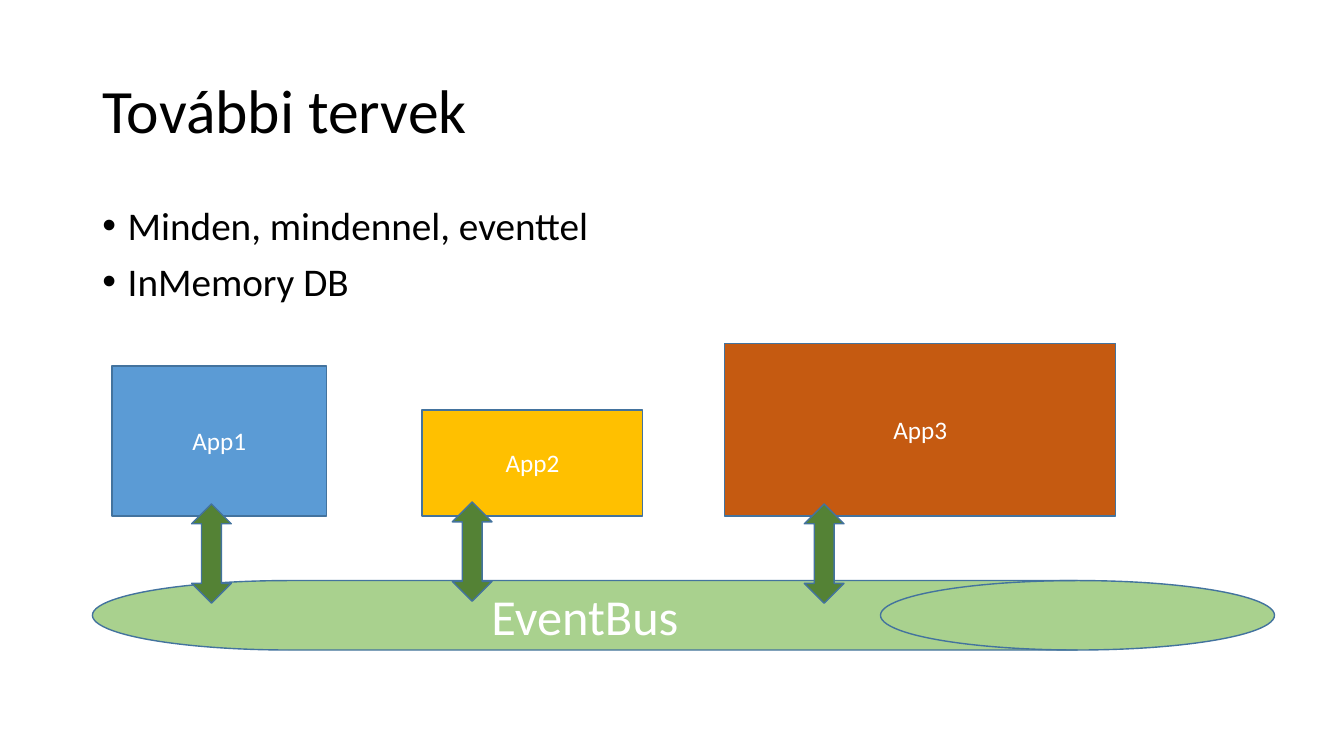
from dataclasses import dataclass

from lxml.etree import SubElement
from pptx import Presentation
from pptx.dml.color import RGBColor
from pptx.enum.shapes import MSO_SHAPE
from pptx.enum.text import MSO_ANCHOR, PP_ALIGN
from pptx.oxml.ns import qn
from pptx.util import Cm, Pt


@dataclass(frozen=True)
class Theme:
    font: str = "Calibri"
    text: str = "000000"
    label: str = "FFFFFF"
    outline: str = "43739E"
    bus: str = "A9D18E"
    arrow: str = "548235"
    blue: str = "5B9BD5"
    yellow: str = "FFC000"
    orange: str = "C55A11"
    title_size: int = 44
    bus_size: int = 36
    body_size: int = 28
    app_size: int = 18


class SlideBuilder:
    def __init__(self, slide, theme):
        self.slide = slide
        self.theme = theme

    def style(self, para, size, color):
        for span in para.runs:
            span.font.name = self.theme.font
            span.font.size = Pt(size)
            span.font.color.rgb = RGBColor.from_string(color)

    def text_box(self, left, top, width, height, anchor):
        box = self.slide.shapes.add_textbox(Cm(left), Cm(top), Cm(width), Cm(height))
        box.text_frame.word_wrap = True
        box.text_frame.vertical_anchor = anchor
        return box.text_frame

    def title(self, text, left, top, width, height):
        frame = self.text_box(left, top, width, height, MSO_ANCHOR.MIDDLE)
        frame.text = text
        para = frame.paragraphs[0]
        para.line_spacing = 0.9
        self.style(para, self.theme.title_size, self.theme.text)

    def bullets(self, items, left, top, width, height):
        frame = self.text_box(left, top, width, height, MSO_ANCHOR.TOP)
        frame.text = "\n".join(items)
        indent = Cm(0.64)
        for index, para in enumerate(frame.paragraphs):
            para.line_spacing = 0.9
            if index:
                para.space_before = Pt(10)
            properties = para._p.get_or_add_pPr()
            properties.set("marL", str(indent))
            properties.set("indent", str(-indent))
            SubElement(properties, qn("a:buFont"), typeface="Arial")
            SubElement(properties, qn("a:buChar"), char="•")
            self.style(para, self.theme.body_size, self.theme.text)

    def shape(self, kind, left, top, width, height, fill, text="", size=18):
        shape = self.slide.shapes.add_shape(kind, Cm(left), Cm(top), Cm(width), Cm(height))
        shape.shadow.inherit = False
        shape.fill.solid()
        shape.fill.fore_color.rgb = RGBColor.from_string(fill)
        shape.line.color.rgb = RGBColor.from_string(self.theme.outline)
        shape.line.width = Pt(1)
        if text:
            frame = shape.text_frame
            frame.text = text
            frame.vertical_anchor = MSO_ANCHOR.MIDDLE
            para = frame.paragraphs[0]
            para.alignment = PP_ALIGN.CENTER
            self.style(para, size, self.theme.label)


def main():
    deck = Presentation()
    deck.slide_width = Cm(33.87)
    deck.slide_height = Cm(19.05)
    theme = Theme()
    page = SlideBuilder(deck.slides.add_slide(deck.slide_layouts[6]), theme)

    page.title("További tervek", 2.33, 1.01, 29.21, 3.68)
    page.bullets(["Minden, mindennel, eventtel", "InMemory DB"], 2.33, 5.07, 29.21, 12.09)
    page.shape(MSO_SHAPE.FLOWCHART_DIRECT_ACCESS_STORAGE, 2.33, 14.63, 29.79, 1.75,
               theme.bus, "EventBus", theme.bus_size)

    app_bottom = 13
    apps = [
        ("App1", 2.82, 5.41, 3.78, theme.blue),
        ("App2", 10.64, 5.56, 2.67, theme.yellow),
        ("App3", 18.26, 9.86, 4.34, theme.orange),
    ]
    for name, left, width, height, fill in apps:
        page.shape(MSO_SHAPE.RECTANGLE, left, app_bottom - height, width, height,
                   fill, name, theme.app_size)

    for left, top in [(20.27, 12.7), (11.4, 12.65), (4.83, 12.7)]:
        page.shape(MSO_SHAPE.UP_DOWN_ARROW, left, top, 1, 2.5, theme.arrow)

    deck.save("out.pptx")


if __name__ == "__main__":
    main()
